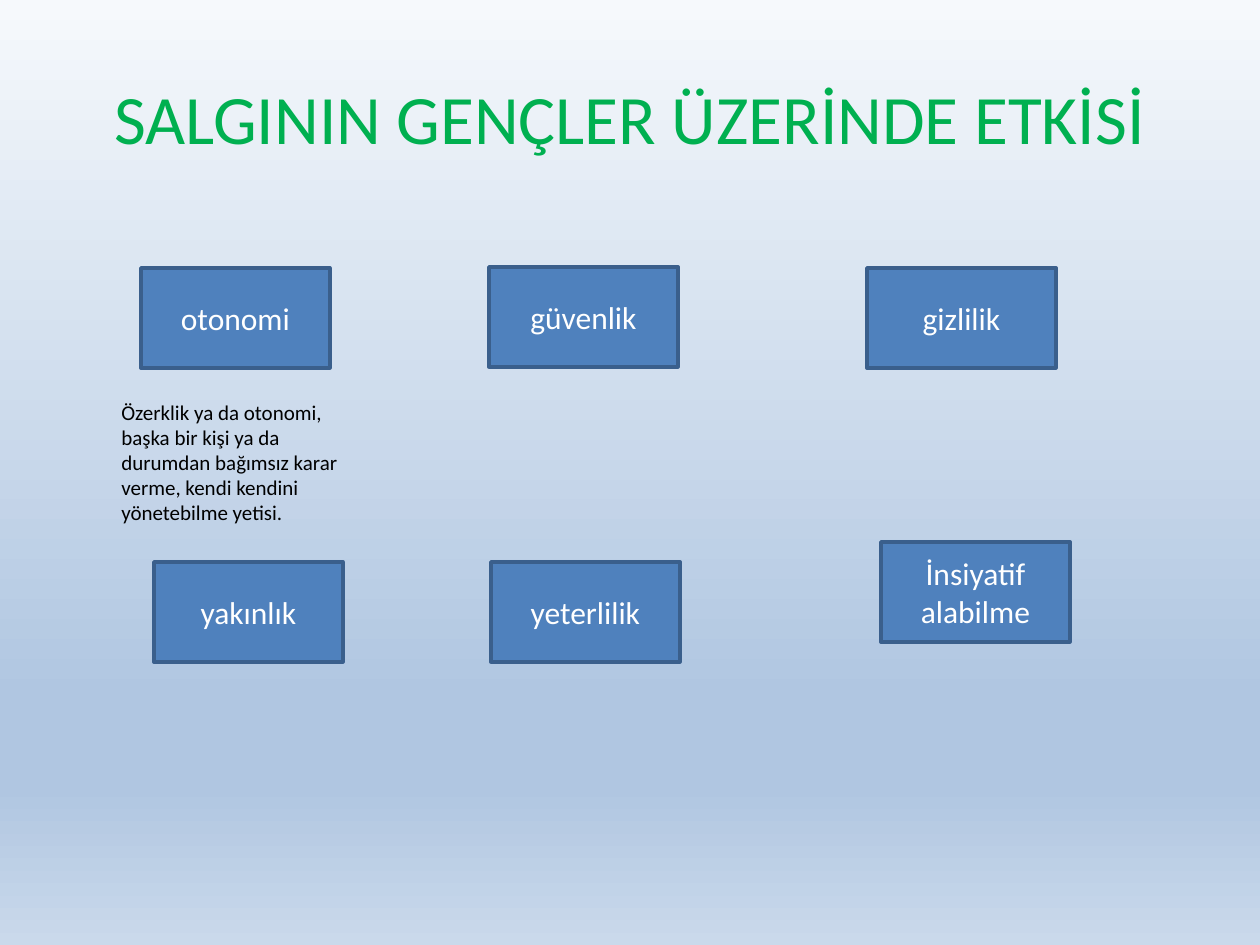
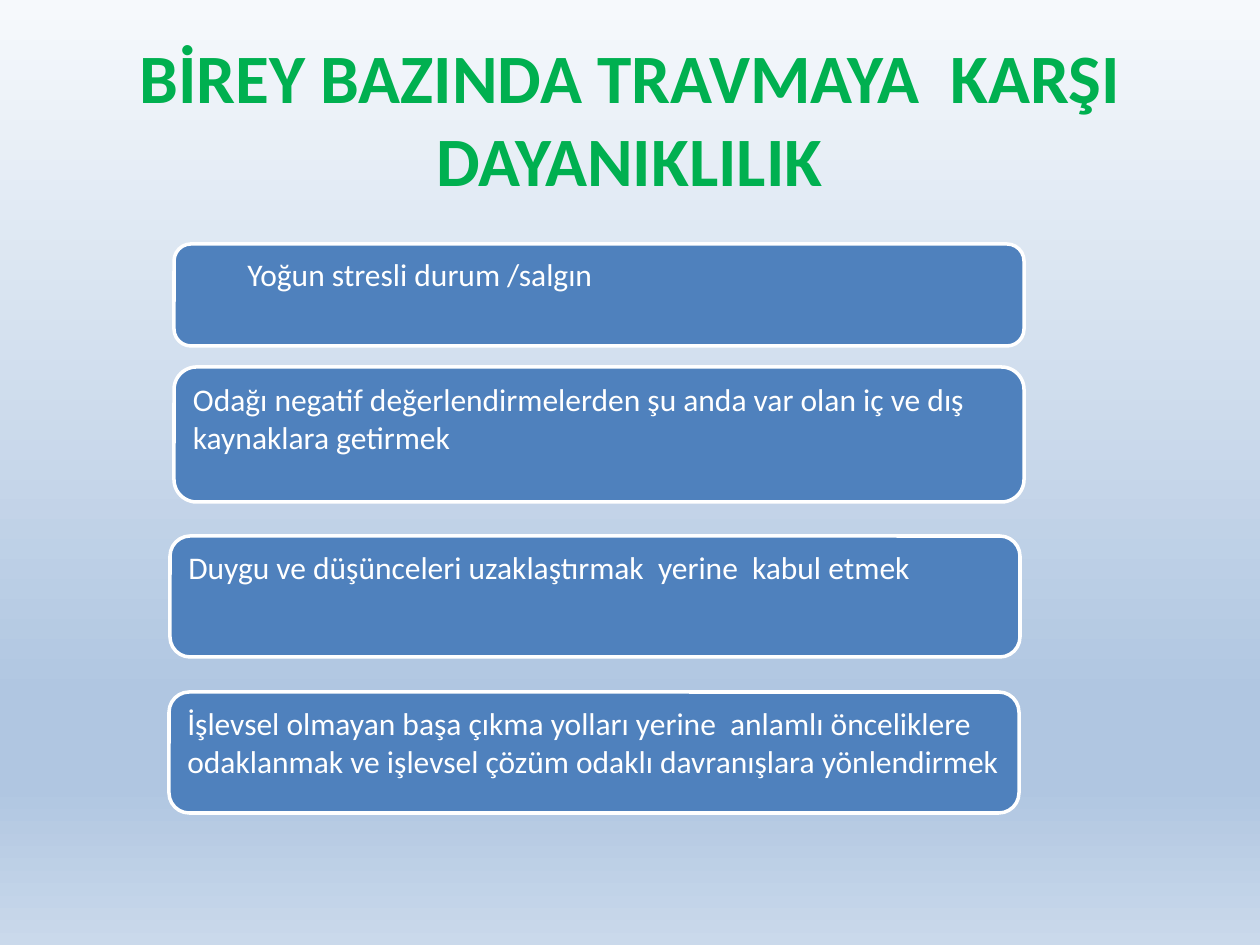
from lxml import etree
from pptx import Presentation
from pptx.dml.color import RGBColor
from pptx.enum.shapes import MSO_SHAPE
from pptx.enum.text import MSO_ANCHOR, PP_ALIGN
from pptx.oxml.ns import qn
from pptx.util import Emu, Pt

RECT, ROUND = MSO_SHAPE.RECTANGLE, MSO_SHAPE.ROUNDED_RECTANGLE
LEFT, CENTER = PP_ALIGN.LEFT, PP_ALIGN.CENTER
TOP, MIDDLE = MSO_ANCHOR.TOP, MSO_ANCHOR.MIDDLE

FONT = "Calibri"
GREEN, BLUE, NAVY = "00B050", "4F81BD", "3A5F8C"
WHITE, BLACK = "FFFFFF", "000000"
SKY = [(0, "F6F9FC"), (74, "B0C6E1"), (83, "B0C6E1"), (100, "CAD9EB")]


def px(n):
    """Length in EMU of n px, at 126 px to the inch."""
    return Emu(round(n * 914400 / 126))


def color(value):
    return RGBColor.from_string(value)


class Deck:
    """Holds the shared style and the current slide."""

    def __init__(self):
        self.prs = Presentation()
        self.prs.slide_width, self.prs.slide_height = px(1260), px(945)
        self.paint_background()

    def paint_background(self):
        """Give the master a top-to-bottom gradient with the SKY stops."""
        master = self.prs.slide_master
        fill = master.background.fill
        fill.gradient()
        fill.gradient_angle = 270
        stops = next(master.element.iter(qn("a:gsLst")))
        for stop in list(stops):
            stops.remove(stop)
        for pos, value in SKY:
            stop = etree.SubElement(stops, qn("a:gs"), pos=str(pos * 1000))
            etree.SubElement(stop, qn("a:srgbClr"), val=value)

    def new_slide(self, title, bold=False):
        self.s = self.prs.slides.add_slide(self.prs.slide_layouts[6])
        self.text(title, 63, 38, 1134, 158, 39.6, GREEN, CENTER, MIDDLE, bold)

    def set_text(self, sp, text, size, value, align, anchor, bold=False):
        tf = sp.text_frame
        tf.word_wrap = True
        tf.vertical_anchor = anchor
        tf.text = text
        p = tf.paragraphs[0]
        p.alignment = align
        font = p.runs[0].font
        font.name, font.size, font.bold = FONT, Pt(size), bold
        font.color.rgb = color(value)

    def text(self, text, x, y, w, h, size, value, align=LEFT, anchor=TOP, bold=False):
        sp = self.s.shapes.add_textbox(px(x), px(y), px(w), px(h))
        self.set_text(sp, text, size, value, align, anchor, bold)

    def box(self, kind, text, x, y, w, h, line, align, anchor, indent=0):
        sp = self.s.shapes.add_shape(kind, px(x), px(y), px(w), px(h))
        sp.shadow.inherit = False
        sp.fill.solid()
        sp.fill.fore_color.rgb = color(BLUE)
        sp.line.color.rgb = color(line)
        sp.line.width = Pt(2)
        self.set_text(sp, text, 18, WHITE, align, anchor)
        if indent:
            pPr = sp.text_frame.paragraphs[0]._p.get_or_add_pPr()
            pPr.set("marL", str(px(indent)))

    def need(self, text, x, y):
        self.box(RECT, text, x, y, 189, 100, NAVY, CENTER, MIDDLE)

    def step(self, text, x, y, h, indent=0):
        self.box(ROUND, text, x, y, 850, h, WHITE, LEFT, TOP, indent)


def needs_slide(deck):
    deck.new_slide("SALGININ GENÇLER ÜZERİNDE ETKİSİ")
    for text, x, y in [
        ("otonomi", 141, 268),
        ("güvenlik", 489, 267),
        ("gizlilik", 867, 268),
        ("yakınlık", 154, 562),
        ("yeterlilik", 491, 562),
        ("İnsiyatif alabilme", 881, 542),
    ]:
        deck.need(text, x, y)
    deck.text("Özerklik ya da otonomi, başka bir kişi ya da durumdan bağımsız "
              "karar verme, kendi kendini yönetebilme yetisi.",
              109, 393, 277, 115, 12, BLACK)


def resilience_slide(deck):
    deck.new_slide("BİREY BAZINDA TRAVMAYA  KARŞI DAYANIKLILIK", bold=True)
    deck.step("Yoğun stresli durum /salgın", 174, 244, 102, indent=56)
    deck.step("Odağı negatif değerlendirmelerden şu anda var olan iç ve dış "
              "kaynaklara getirmek", 174, 367, 135)
    deck.step("Duygu ve düşünceleri uzaklaştırmak  yerine  kabul etmek",
              170, 536, 121)
    deck.step("İşlevsel olmayan başa çıkma yolları yerine  anlamlı önceliklere "
              "odaklanmak ve işlevsel çözüm odaklı davranışlara yönlendirmek",
              169, 692, 121)


def main():
    deck = Deck()
    needs_slide(deck)
    resilience_slide(deck)
    deck.prs.save("out.pptx")


if __name__ == "__main__":
    main()
